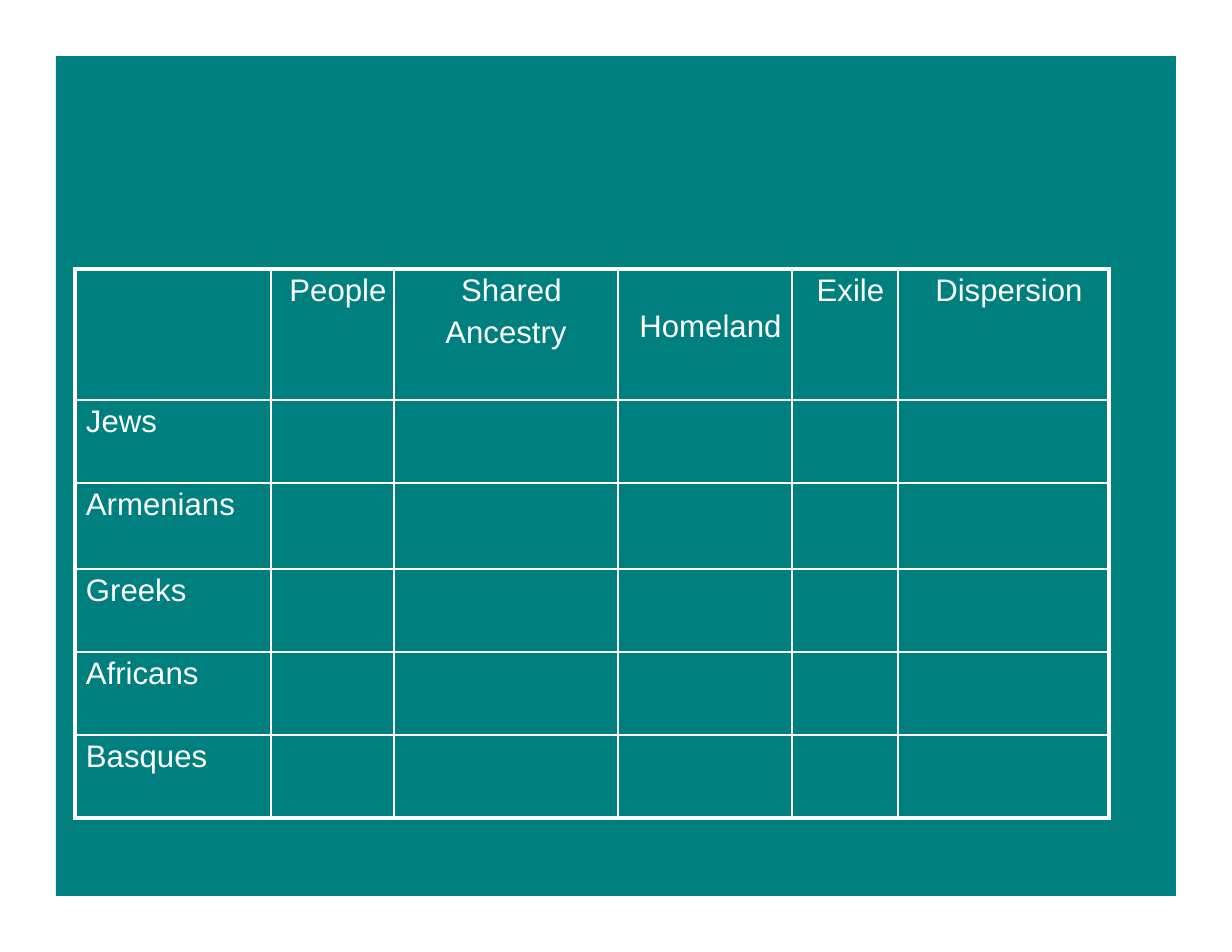
from lxml.etree import SubElement
from pptx import Presentation
from pptx.dml.color import RGBColor
from pptx.enum.shapes import MSO_SHAPE
from pptx.enum.text import PP_ALIGN
from pptx.oxml.ns import qn
from pptx.util import Pt

C = {"teal": "007F7F", "white": "FFFFFF"}
COLS = [196, 123, 224, 174, 106, 211]
ROWS = [131, 83, 86, 83, 83, 83]
COL_LINES = [3, 1.5, 1.5, 1.5, 1.5, 1.5, 3]
ROW_LINES = [3, 1.5, 1, 1, 1, 1.5, 3]
HEADERS = ["", "People", "Shared\nAncestry", "Homeland", "Exile", "Dispersion"]
PEOPLES = ["Jews", "Armenians", "Greeks", "Africans", "Basques"]


def px(n):
    return int(n * 914400 / 112)


def add_border(cell, side, width):
    ln = SubElement(cell._tc.get_or_add_tcPr(), qn(f"a:ln{side}"), w=str(Pt(width)))
    fill = SubElement(ln, qn("a:solidFill"))
    SubElement(fill, qn("a:srgbClr"), val=C["white"])


prs = Presentation()
prs.slide_width, prs.slide_height = px(1232), px(952)
s = prs.slides.add_slide(prs.slide_layouts[6])

# Teal backdrop in two halves
for top in (56, 476):
    sp = s.shapes.add_shape(MSO_SHAPE.RECTANGLE, px(56), px(top), px(1120), px(420))
    sp.shadow.inherit = False
    sp.fill.solid()
    sp.fill.fore_color.rgb = RGBColor.from_string(C["teal"])
    sp.line.fill.background()

# Diaspora table
tbl = s.shapes.add_table(len(ROWS), len(COLS), px(75), px(269),
                         px(sum(COLS)), px(sum(ROWS))).table
tbl.first_row = tbl.horz_banding = False
for col, width in zip(tbl.columns, COLS):
    col.width = px(width)
for row, height in zip(tbl.rows, ROWS):
    row.height = px(height)

texts = [HEADERS] + [[name] + [""] * (len(COLS) - 1) for name in PEOPLES]
for i, row in enumerate(texts):
    for j, text in enumerate(row):
        cell = tbl.cell(i, j)
        cell.margin_left = cell.margin_right = cell.margin_bottom = 0
        cell.margin_top = px(40 if text == "Homeland" else 4)
        add_border(cell, "L", COL_LINES[j])
        add_border(cell, "R", COL_LINES[j + 1])
        add_border(cell, "T", ROW_LINES[i])
        add_border(cell, "B", ROW_LINES[i + 1])
        cell.fill.solid()
        cell.fill.fore_color.rgb = RGBColor.from_string(C["teal"])
        if not text:
            continue
        tf = cell.text_frame
        for n, line in enumerate(text.split("\n")):
            p = tf.add_paragraph() if n else tf.paragraphs[0]
            p.alignment = PP_ALIGN.LEFT if i else PP_ALIGN.CENTER
            p.space_before = Pt(4.8 if n else 3)
            p._p.get_or_add_pPr().set("marL", str(px(0 if n else 11)))
            r = p.add_run()
            r.text = line
            r.font.name = "Arial"
            r.font.size = Pt(20)
            r.font.color.rgb = RGBColor.from_string(C["white"])

prs.save("out.pptx")
